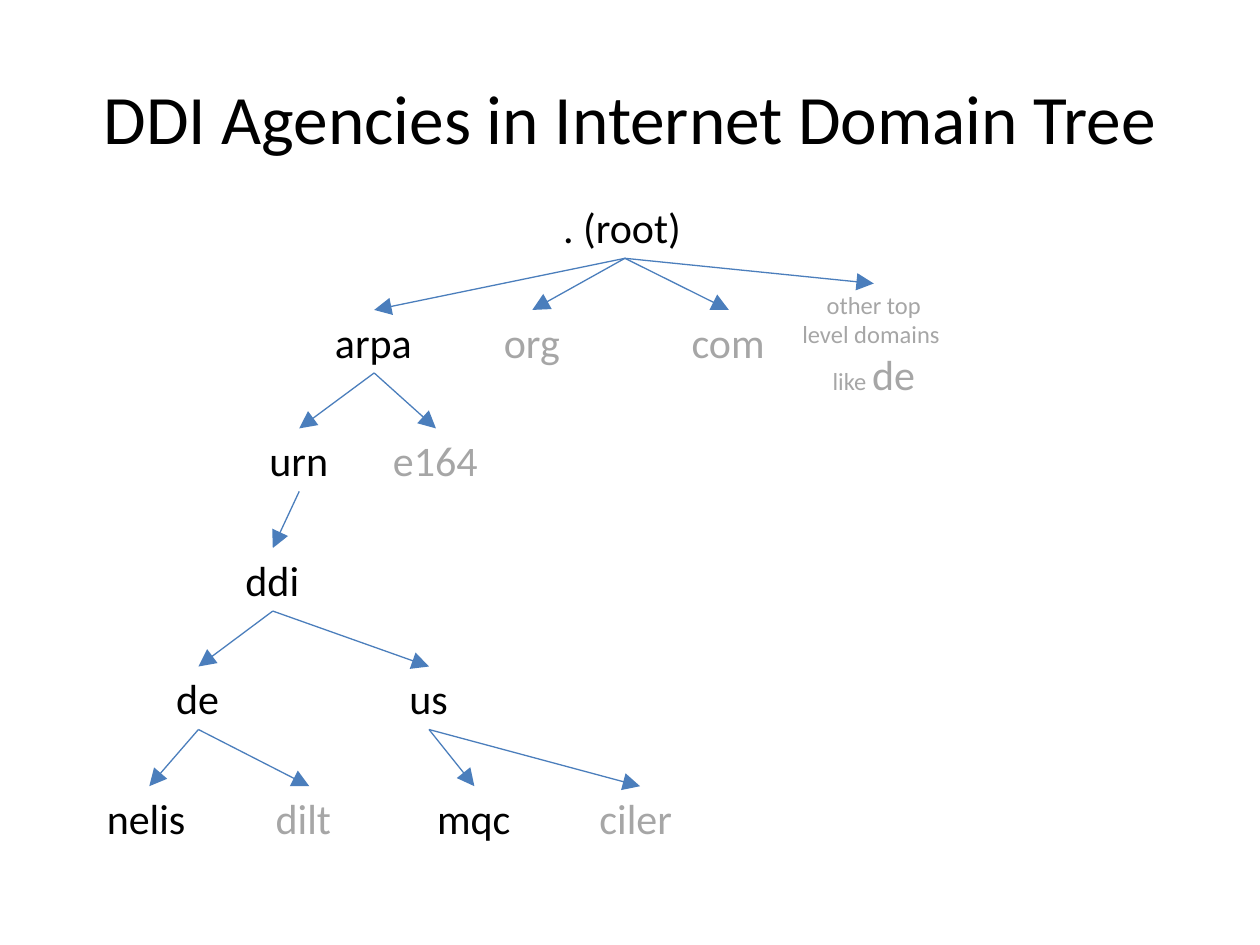
from dataclasses import dataclass

from lxml import etree
from pptx import Presentation
from pptx.dml.color import RGBColor
from pptx.enum import shapes, text
from pptx.oxml.ns import qn
from pptx.util import Inches, Pt

BLACK = RGBColor(0x00, 0x00, 0x00)
GREY = RGBColor(0xA6, 0xA6, 0xA6)
BLUE = RGBColor(0x4B, 0x7E, 0xBC)
FONT = "Calibri"
LABEL_SIZE = 24
SMALL_SIZE = 14
LABEL_HEIGHT = 0.5
BOTTOM, TOP = 2, 0
LEVEL_TOPS = [1.55, 2.46, 3.4, 4.35, 5.29, 6.24]


@dataclass(frozen=True)
class Domain:
    label: str
    level: int
    left: float
    width: float
    parent: str = ""
    color: RGBColor = BLACK


DOMAINS = [
    Domain(". (root)", 0, 4.37, 1.18),
    Domain("arpa", 1, 2.56, 0.82, ". (root)"),
    Domain("org", 1, 3.9, 0.65, ". (root)", GREY),
    Domain("com", 1, 5.39, 0.79, ". (root)", GREY),
    Domain("urn", 2, 2.04, 0.67, "arpa"),
    Domain("e164", 2, 3.02, 0.88, "arpa", GREY),
    Domain("ddi", 3, 1.85, 0.63, "urn"),
    Domain("de", 4, 1.3, 0.55, "ddi"),
    Domain("us", 4, 3.15, 0.51, "ddi"),
    Domain("nelis", 5, 0.75, 0.87, "de"),
    Domain("dilt", 5, 2.09, 0.73, "de", GREY),
    Domain("mqc", 5, 3.37, 0.79, "us"),
    Domain("ciler", 5, 4.66, 0.84, "us", GREY),
]


def format_run(run, size: float, color: RGBColor) -> None:
    run.font.name = FONT
    run.font.size = Pt(size)
    run.font.color.rgb = color


def add_label(slide, domain: Domain):
    label = slide.shapes.add_textbox(
        Inches(domain.left), Inches(LEVEL_TOPS[domain.level]),
        Inches(domain.width), Inches(LABEL_HEIGHT))
    frame = label.text_frame
    frame.word_wrap = False
    frame.auto_size = text.MSO_AUTO_SIZE.SHAPE_TO_FIT_TEXT
    frame.text = domain.label
    format_run(frame.paragraphs[0].runs[0], LABEL_SIZE, domain.color)
    return label


def add_other_domains(slide):
    others = slide.shapes.add_textbox(
        Inches(6.26), Inches(2.25), Inches(1.35), Inches(0.98))
    frame = others.text_frame
    frame.word_wrap = True
    frame.auto_size = text.MSO_AUTO_SIZE.SHAPE_TO_FIT_TEXT
    frame.text = "other top\nlevel domains \nlike "
    for paragraph in frame.paragraphs:
        paragraph.alignment = text.PP_ALIGN.CENTER
        format_run(paragraph.runs[0], SMALL_SIZE, GREY)
    country = frame.paragraphs[-1].add_run()
    country.text = "de"
    format_run(country, LABEL_SIZE, GREY)
    return others


def add_branch(slide, parent, child) -> None:
    branch = slide.shapes.add_connector(shapes.MSO_CONNECTOR.STRAIGHT, 0, 0, 0, 0)
    branch.begin_connect(parent, BOTTOM)
    branch.end_connect(child, TOP)
    branch.line.color.rgb = BLUE
    branch.line.width = Pt(0.75)
    properties = branch.element.spPr
    etree.SubElement(properties.find(qn("a:ln")), qn("a:tailEnd"),
                     type="triangle", w="lg", len="lg")
    etree.SubElement(properties, qn("a:effectLst"))


def add_title(slide, wording: str) -> None:
    title = slide.shapes.title
    title.left, title.top = Inches(0.5), Inches(0.3)
    title.width, title.height = Inches(9), Inches(1.25)
    frame = title.text_frame
    frame.text = wording
    frame.vertical_anchor = text.MSO_ANCHOR.MIDDLE
    frame.paragraphs[0].alignment = text.PP_ALIGN.CENTER
    format_run(frame.paragraphs[0].runs[0], 39.6, BLACK)


def main() -> None:
    deck = Presentation()
    deck.slide_width, deck.slide_height = Inches(10), Inches(7.5)
    slide = deck.slides.add_slide(deck.slide_layouts[5])
    add_title(slide, "DDI Agencies in Internet Domain Tree")

    labels = {domain.label: add_label(slide, domain) for domain in DOMAINS}
    others = add_other_domains(slide)
    for domain in DOMAINS:
        if domain.parent:
            add_branch(slide, labels[domain.parent], labels[domain.label])
    add_branch(slide, labels[". (root)"], others)

    deck.save("out.pptx")


if __name__ == "__main__":
    main()
